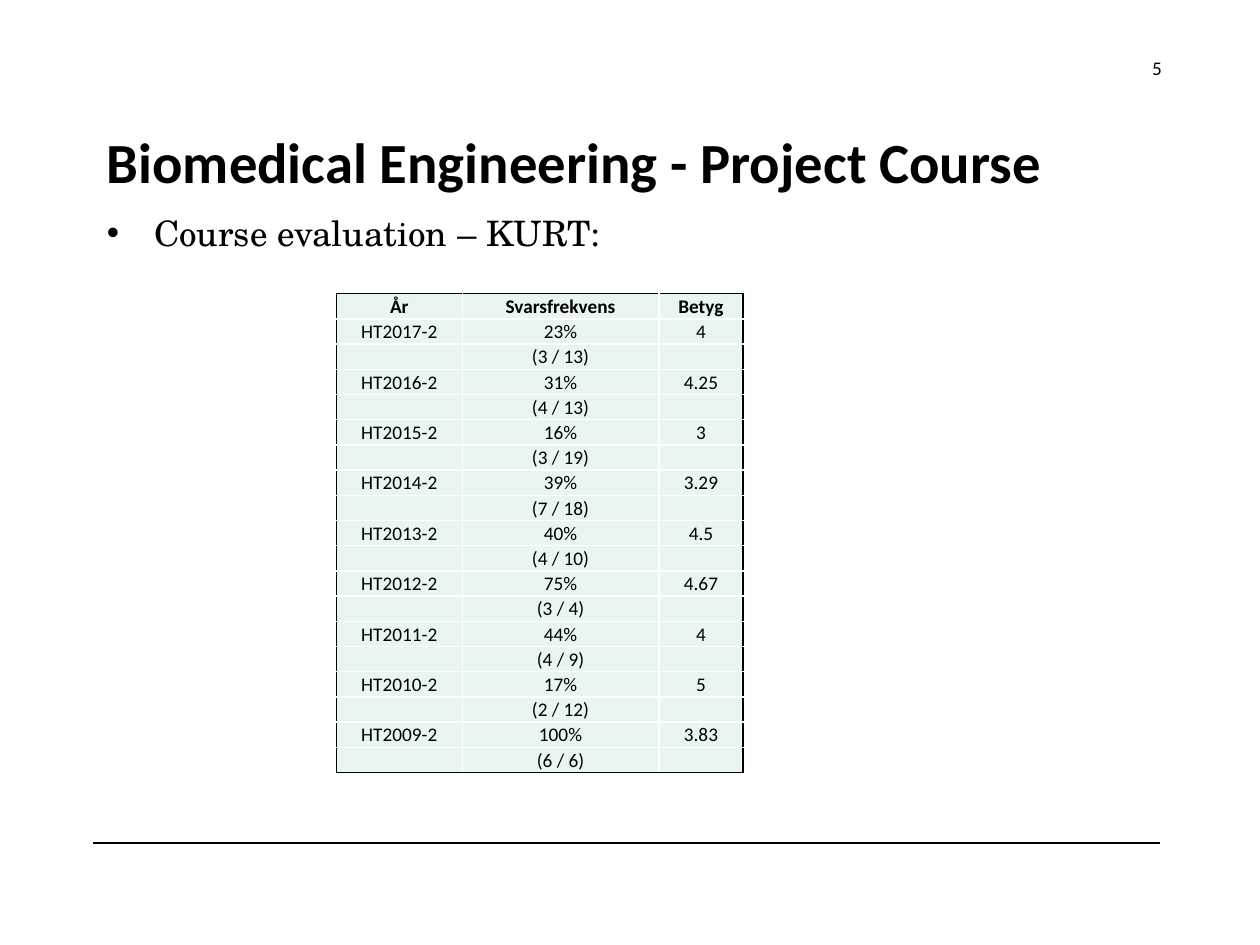
from dataclasses import dataclass
from typing import Any, NamedTuple

from lxml import etree
from pptx import Presentation
from pptx.dml import color
from pptx.enum import shapes, text
from pptx.oxml import ns
from pptx.util import Pt

BLACK, WHITE, MINT = "000000", "FFFFFF", "E8F5F1"
ROW_HEIGHT = 14.4
COLUMN_WIDTHS = (72, 112.3, 48.2)


@dataclass
class TextBlock:
    content: str
    box: tuple[float, float, float, float]
    font: dict[str, Any]
    alignment: text.PP_ALIGN = text.PP_ALIGN.LEFT
    anchor: text.MSO_ANCHOR = text.MSO_ANCHOR.TOP
    bullet: str = ""


class Evaluation(NamedTuple):
    year: int
    rate: str
    answers: int
    students: int
    grade: str


BLOCKS = [
    TextBlock("Biomedical Engineering - Project Course", (54, 67, 609, 50.4),
              {"name": "Calibri", "size": Pt(32.4), "bold": True},
              anchor=text.MSO_ANCHOR.MIDDLE),
    TextBlock("Course evaluation – KURT:", (54, 117.4, 609, 347),
              {"name": "TeX Gyre Schola", "size": Pt(20)}, bullet="•"),
    TextBlock("5", (627, 28.8, 44, 20.9), {"name": "Calibri", "size": Pt(11)},
              alignment=text.PP_ALIGN.RIGHT),
]

EVALUATIONS = [
    Evaluation(2017, "23%", 3, 13, "4"),
    Evaluation(2016, "31%", 4, 13, "4.25"),
    Evaluation(2015, "16%", 3, 19, "3"),
    Evaluation(2014, "39%", 7, 18, "3.29"),
    Evaluation(2013, "40%", 4, 10, "4.5"),
    Evaluation(2012, "75%", 3, 4, "4.67"),
    Evaluation(2011, "44%", 4, 9, "4"),
    Evaluation(2010, "17%", 2, 12, "5"),
    Evaluation(2009, "100%", 6, 6, "3.83"),
]


def rgb(value: str) -> color.RGBColor:
    return color.RGBColor.from_string(value)


def apply(target: Any, values: dict[str, Any]) -> None:
    for name, value in values.items():
        setattr(target, name, value)


def add_element(parent: Any, tag: str, **attributes: str) -> Any:
    return etree.SubElement(parent, ns.qn(tag), attributes)


def add_text(slide: Any, block: TextBlock) -> None:
    shape = slide.shapes.add_textbox(*map(Pt, block.box))
    apply(shape.text_frame, {"word_wrap": True, "vertical_anchor": block.anchor})
    paragraph = shape.text_frame.paragraphs[0]
    paragraph.alignment = block.alignment
    if block.bullet:
        properties = paragraph._p.get_or_add_pPr()
        apply_indent = {"marL": Pt(27), "indent": -Pt(27)}
        for name, value in apply_indent.items():
            properties.set(name, str(int(value)))
        add_element(properties, "a:buFont", typeface="Arial")
        add_element(properties, "a:buChar", char=block.bullet)
    run = paragraph.add_run()
    run.text = block.content
    apply(run.font, block.font)
    run.font.color.rgb = rgb(BLACK)


def add_rule(slide: Any) -> None:
    rule = slide.shapes.add_connector(
        shapes.MSO_CONNECTOR.STRAIGHT, Pt(53.3), Pt(481.7), Pt(663), Pt(481.7))
    rule.line.color.rgb = rgb(BLACK)
    rule.line.width = Pt(0.75)
    add_element(rule._element.spPr, "a:effectLst")


def add_borders(cell: Any, outer_sides: dict[str, bool]) -> None:
    properties = cell._tc.get_or_add_tcPr()
    for position, (side, is_outer) in enumerate(outer_sides.items()):
        border = etree.Element(ns.qn(f"a:ln{side}"), w=str(int(Pt(1))))
        fill = add_element(border, "a:solidFill")
        add_element(fill, "a:srgbClr", val=BLACK if is_outer else WHITE)
        properties.insert(position, border)


def fill_cell(cell: Any, content: str, bold: bool) -> None:
    apply(cell, {"margin_left": Pt(0.72), "margin_right": Pt(0.72),
                 "margin_top": Pt(0.72), "margin_bottom": Pt(0),
                 "vertical_anchor": text.MSO_ANCHOR.MIDDLE})
    cell.fill.solid()
    cell.fill.fore_color.rgb = rgb(MINT)
    paragraph = cell.text_frame.paragraphs[0]
    paragraph.alignment = text.PP_ALIGN.CENTER
    if not content:
        add_element(paragraph._p, "a:endParaRPr", sz="1100")
        return
    run = paragraph.add_run()
    run.text = content
    apply(run.font, {"name": "Calibri", "size": Pt(11), "bold": bold})
    run.font.color.rgb = rgb(BLACK)


def add_evaluation_table(slide: Any, evaluations: list[Evaluation]) -> None:
    rows = [("År", "Svarsfrekvens", "Betyg")]
    for item in evaluations:
        rows.append((f"HT{item.year}-2", item.rate, item.grade))
        rows.append(("", f"({item.answers} / {item.students})", ""))
    frame = slide.shapes.add_table(
        len(rows), len(COLUMN_WIDTHS), Pt(192.2), Pt(167.8),
        Pt(sum(COLUMN_WIDTHS)), Pt(ROW_HEIGHT * len(rows)))
    table = frame.table
    apply(table, {"first_row": False, "horz_banding": False})
    for column, width in zip(table.columns, COLUMN_WIDTHS):
        column.width = Pt(width)
    last_row, last_column = len(rows) - 1, len(COLUMN_WIDTHS) - 1
    for row_index, row in enumerate(rows):
        table.rows[row_index].height = Pt(ROW_HEIGHT)
        for column_index, content in enumerate(row):
            cell = table.cell(row_index, column_index)
            fill_cell(cell, content, bold=row_index == 0)
            add_borders(cell, {"L": column_index == 0,
                               "R": column_index == last_column,
                               "T": row_index == 0,
                               "B": row_index == last_row})


def main() -> None:
    presentation = Presentation()
    apply(presentation, {"slide_width": Pt(720), "slide_height": Pt(540)})
    slide = presentation.slides.add_slide(presentation.slide_layouts[6])
    add_rule(slide)
    for block in BLOCKS:
        add_text(slide, block)
    add_evaluation_table(slide, EVALUATIONS)
    presentation.save("out.pptx")


if __name__ == "__main__":
    main()
